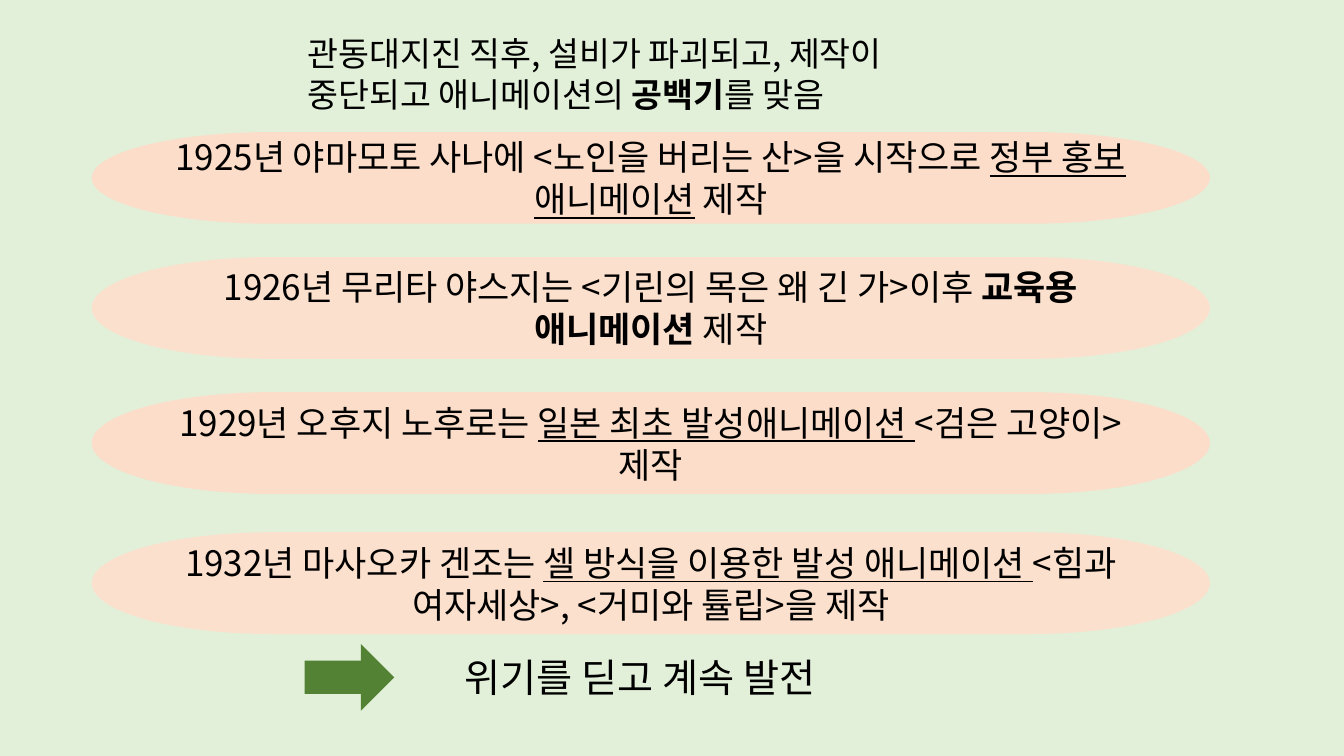
from dataclasses import dataclass

from lxml import etree
from pptx import Presentation
from pptx import util as u
from pptx.dml.color import RGBColor
from pptx.enum import shapes, text
from pptx.oxml.ns import qn

PX = 9144  # EMU per px, 100 px to the inch
FONT = "Noto Sans CJK KR"
MINT = RGBColor(0xE2, 0xF0, 0xD9)
PEACH = RGBColor(0xFB, 0xDD, 0xC9)
LIGHT_PEACH = RGBColor(0xFB, 0xE0, 0xCD)
GREEN = RGBColor(0x54, 0x82, 0x35)
BLACK = RGBColor(0, 0, 0)
EVENT_LEFT, EVENT_WIDTH = 91, 1109


@dataclass(frozen=True)
class Phrase:
    """A sentence whose key words are bold or underlined."""
    before: str
    key: str = ""
    after: str = ""
    bold: bool = False


@dataclass(frozen=True)
class Event:
    top: int
    height: int
    fill: RGBColor
    phrase: Phrase


@dataclass(frozen=True)
class Caption:
    left: int
    top: int
    width: int
    height: int
    size: int
    phrase: Phrase


EVENTS = [
    Event(131, 91, PEACH, Phrase(
        "1925년 야마모토 사나에 <노인을 버리는 산>을 시작으로 ",
        "정부 홍보 애니메이션", " 제작")),
    Event(255, 101, LIGHT_PEACH, Phrase(
        "1926년 무리타 야스지는 <기린의 목은 왜 긴 가>이후 ",
        "교육용 애니메이션", " 제작", bold=True)),
    Event(389, 101, PEACH, Phrase(
        "1929년 오후지 노후로는 ",
        "일본 최초 발성애니메이션 ", "<검은 고양이> 제작")),
    Event(528, 101, LIGHT_PEACH, Phrase(
        "1932년 마사오카 겐조는 ",
        "셀 방식을 이용한 발성 애니메이션 ",
        "<힘과 여자세상>, <거미와 튤립>을 제작")),
]

CAPTIONS = [
    Caption(295, 28, 701, 91, 24, Phrase(
        "관동대지진 직후, 설비가 파괴되고, 제작이 중단되고 애니메이션의 ",
        "공백기", "를 맞음", bold=True)),
    Caption(451, 643, 473, 57, 28, Phrase("위기를 딛고 계속 발전")),
]


def box(left: int, top: int, width: int, height: int) -> list[u.Emu]:
    return [u.Emu(px * PX) for px in (left, top, width, height)]


def write_phrase(frame, phrase: Phrase, size: int) -> None:
    frame.word_wrap = True
    paragraph = frame.paragraphs[0]
    font = paragraph.font
    font.name, font.size = FONT, u.Pt(size)
    font.color.rgb = BLACK
    # Hangul takes its typeface from the East Asian font
    defaults = paragraph._p.pPr.find(qn("a:defRPr"))
    etree.SubElement(defaults, qn("a:ea"), typeface=FONT)

    for words in filter(None, (phrase.before, phrase.key, phrase.after)):
        run = paragraph.add_run()
        run.text = words
        if words == phrase.key:
            if phrase.bold:
                run.font.bold = True
            else:
                run.font.underline = True


def add_block(slide, preset, place: list[u.Emu], fill: RGBColor):
    block = slide.shapes.add_shape(preset, *place)
    block.shadow.inherit = False
    block.fill.solid()
    block.fill.fore_color.rgb = fill
    block.line.fill.background()
    return block


def add_event(slide, event: Event) -> None:
    place = box(EVENT_LEFT, event.top, EVENT_WIDTH, event.height)
    pill = add_block(slide, shapes.MSO_SHAPE.FLOWCHART_TERMINATOR,
                     place, event.fill)
    frame = pill.text_frame
    frame.vertical_anchor = text.MSO_ANCHOR.MIDDLE
    frame.paragraphs[0].alignment = text.PP_ALIGN.CENTER
    write_phrase(frame, event.phrase, 25)


def add_caption(slide, caption: Caption) -> None:
    place = box(caption.left, caption.top, caption.width, caption.height)
    frame = slide.shapes.add_textbox(*place).text_frame
    frame.auto_size = text.MSO_AUTO_SIZE.SHAPE_TO_FIT_TEXT
    write_phrase(frame, caption.phrase, caption.size)


def main() -> None:
    deck = Presentation()
    deck.slide_width, deck.slide_height = u.Emu(1333 * PX), u.Emu(750 * PX)
    slide = deck.slides.add_slide(deck.slide_layouts[6])
    slide.background.fill.solid()
    slide.background.fill.fore_color.rgb = MINT

    # Timeline of films
    for event in EVENTS:
        add_event(slide, event)

    # Opening and conclusion, with the arrow leading to the latter
    for caption in CAPTIONS:
        add_caption(slide, caption)
    add_block(slide, shapes.MSO_SHAPE.RIGHT_ARROW, box(302, 639, 89, 66), GREEN)

    deck.save("out.pptx")


if __name__ == "__main__":
    main()
